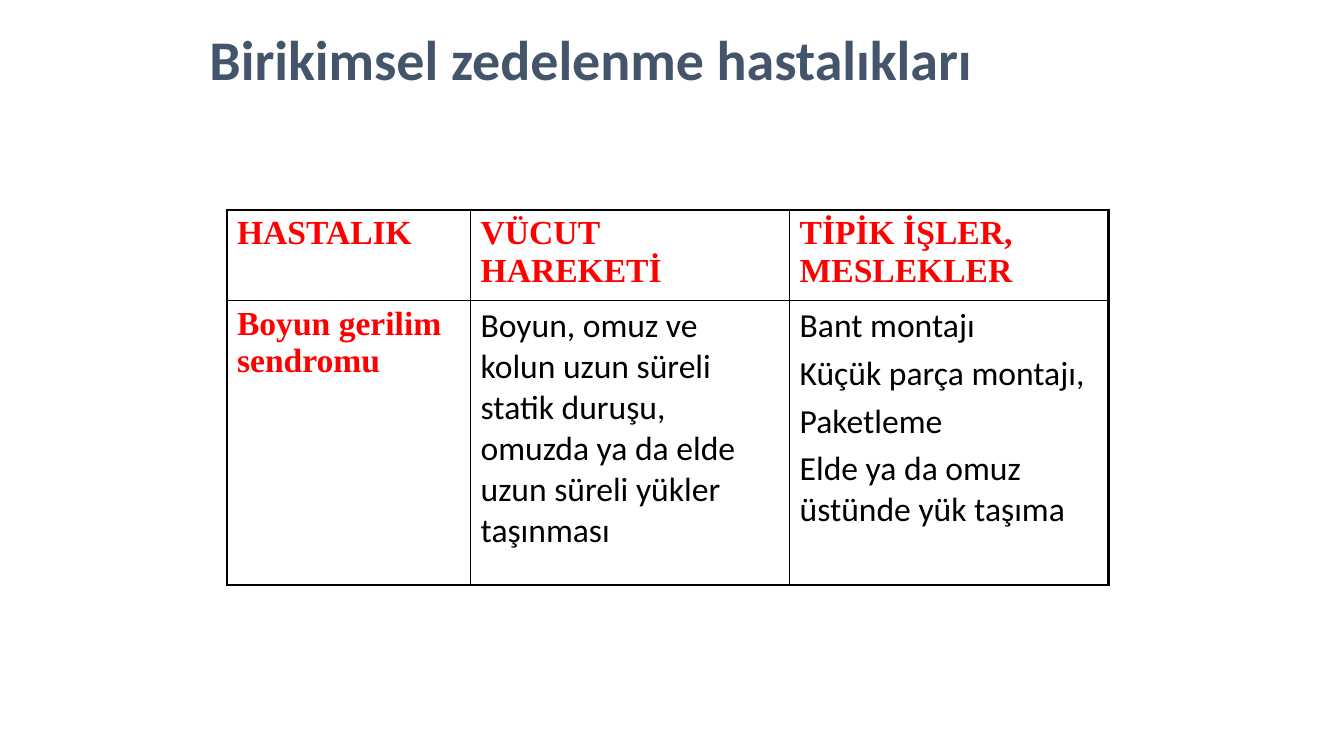
from lxml.etree import SubElement
from pptx import Presentation
from pptx.dml.color import RGBColor
from pptx.enum.text import MSO_ANCHOR
from pptx.oxml.ns import qn
from pptx.util import Cm, Pt

BLACK = RGBColor(0x00, 0x00, 0x00)
RED = RGBColor(0xFF, 0x00, 0x00)
SLATE = RGBColor(0x44, 0x54, 0x6A)

COLUMN_WIDTHS = [6.14, 8.04, 8.04]
ROW_HEIGHTS = [2.29, 7.16]
ROWS = [
    [["HASTALIK"], ["VÜCUT HAREKETİ"], ["TİPİK İŞLER, MESLEKLER"]],
    [
        ["Boyun gerilim sendromu"],
        ["Boyun, omuz ve kolun uzun süreli statik duruşu, "
         "omuzda ya da elde uzun süreli yükler taşınması"],
        ["Bant montajı", "Küçük parça montajı,", "Paketleme",
         "Elde ya da omuz üstünde yük taşıma"],
    ],
]


class DiseaseSlide:
    body_font = "Calibri"
    heading_font = "Times New Roman"
    title_size = Pt(40)
    table_size = Pt(24)
    paragraph_gap = Pt(4.8)
    inner_line = Pt(1)
    outer_line = Pt(2.25)

    def __init__(self, presentation):
        self.slide = presentation.slides.add_slide(presentation.slide_layouts[6])

    def style(self, paragraph, name, size, color, bold):
        font = paragraph.font
        font.name, font.size, font.bold = name, size, bold
        font.color.rgb = color

    def title(self, text, left, top, width, height):
        shape = self.slide.shapes.add_textbox(Cm(left), Cm(top), Cm(width), Cm(height))
        frame = shape.text_frame
        frame.word_wrap = True
        frame.vertical_anchor = MSO_ANCHOR.MIDDLE
        paragraph = frame.paragraphs[0]
        paragraph.text = text
        paragraph.line_spacing = 0.9
        self.style(paragraph, self.body_font, self.title_size, SLATE, True)

    def table(self, rows, left, top, column_widths, row_heights):
        """Add a table whose first row and first column are headings."""
        table = self.slide.shapes.add_table(
            len(rows), len(column_widths), Cm(left), Cm(top),
            Cm(sum(column_widths)), Cm(sum(row_heights))).table
        for column, width in zip(table.columns, column_widths):
            column.width = Cm(width)
        for row, height in zip(table.rows, row_heights):
            row.height = Cm(height)
        last_row, last_column = len(rows) - 1, len(column_widths) - 1
        for r, row in enumerate(rows):
            for c, lines in enumerate(row):
                cell = table.cell(r, c)
                self.fill_cell(cell, lines, heading=r == 0 or c == 0)
                self.borders(cell, {"a:lnL": c == 0, "a:lnR": c == last_column,
                                    "a:lnT": r == 0, "a:lnB": r == last_row})

    def fill_cell(self, cell, lines, heading):
        cell.text = "\n".join(lines)
        for index, paragraph in enumerate(cell.text_frame.paragraphs):
            if index:
                paragraph.space_before = self.paragraph_gap
            name, color = (self.heading_font, RED) if heading else (self.body_font, BLACK)
            self.style(paragraph, name, self.table_size, color, heading)

    def borders(self, cell, outer_edges):
        """Draw each cell edge, heavier where it lies on the table's outline."""
        properties = cell._tc.get_or_add_tcPr()
        for tag, is_outer in outer_edges.items():
            width = self.outer_line if is_outer else self.inner_line
            line = SubElement(properties, qn(tag), w=str(int(width)))
            fill = SubElement(line, qn("a:solidFill"))
            SubElement(fill, qn("a:srgbClr"), val=str(BLACK))
        cell.fill.background()


def main():
    presentation = Presentation()
    presentation.slide_width, presentation.slide_height = Cm(33.87), Cm(19.05)
    slide = DiseaseSlide(presentation)
    slide.table(ROWS, 5.72, 5.29, COLUMN_WIDTHS, ROW_HEIGHTS)
    slide.title("Birikimsel zedelenme hastalıkları", 5.03, 0.58, 23.62, 1.98)
    presentation.save("out.pptx")


if __name__ == "__main__":
    main()
